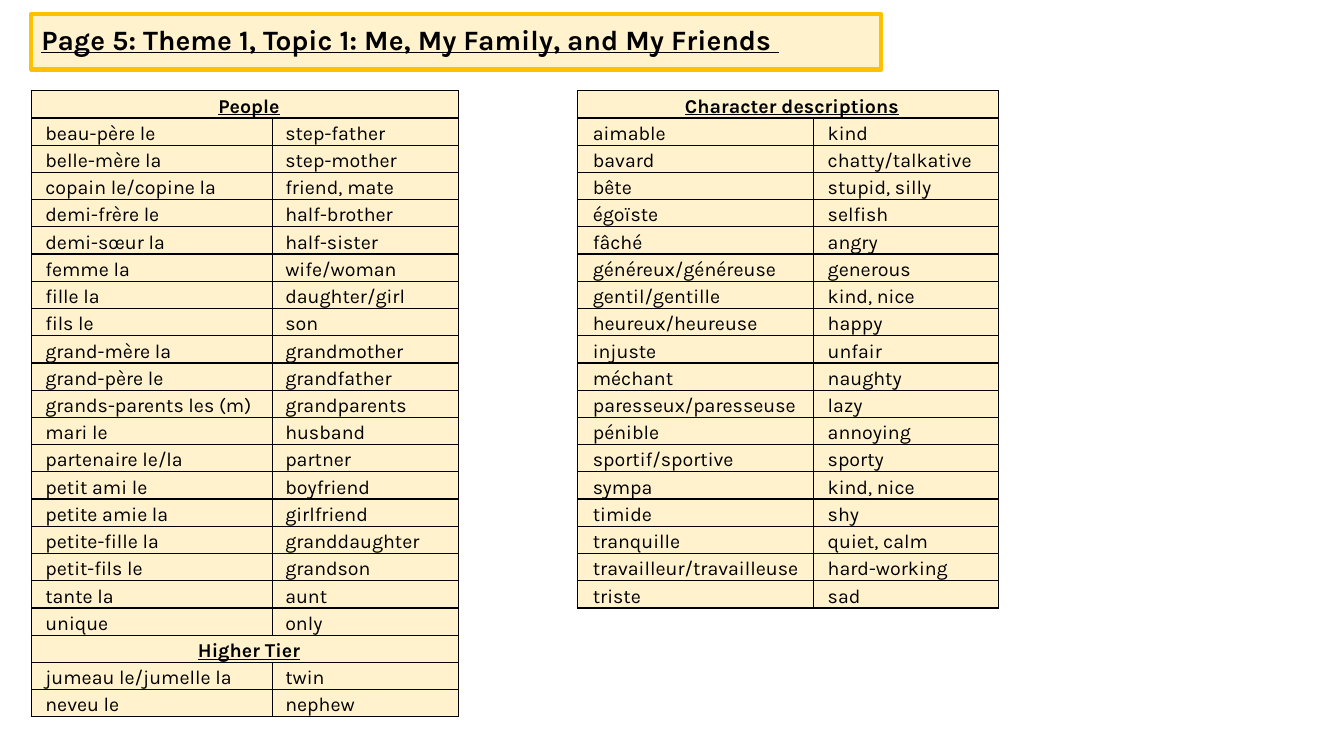
from lxml import etree
from pptx import Presentation
from pptx.dml.color import RGBColor
from pptx.enum import text
from pptx.oxml import ns
from pptx.util import Pt

PX = 9144  # EMU per px, 100 px to the inch
FONT = "Karla"
COLORS = {"cream": "FFF2CC", "gold": "FFC000", "ink": "000000"}
TITLE = "Page 5: Theme 1, Topic 1: Me, My Family, and My Friends "

# A row with one entry is a heading across both columns.
PEOPLE = [
    ("People",),
    ("beau-père le", "step-father"),
    ("belle-mère la", "step-mother"),
    ("copain le/copine la", "friend, mate"),
    ("demi-frère le", "half-brother"),
    ("demi-sœur la", "half-sister"),
    ("femme la", "wife/woman"),
    ("fille la", "daughter/girl"),
    ("fils le", "son"),
    ("grand-mère la", "grandmother"),
    ("grand-père le", "grandfather"),
    ("grands-parents les (m)", "grandparents"),
    ("mari le", "husband"),
    ("partenaire le/la", "partner"),
    ("petit ami le", "boyfriend"),
    ("petite amie la", "girlfriend"),
    ("petite-fille la", "granddaughter"),
    ("petit-fils le", "grandson"),
    ("tante la", "aunt"),
    ("unique", "only"),
    ("Higher Tier",),
    ("jumeau le/jumelle la", "twin"),
    ("neveu le", "nephew"),
]
CHARACTER = [
    ("Character descriptions",),
    ("aimable", "kind"),
    ("bavard", "chatty/talkative"),
    ("bête", "stupid, silly"),
    ("égoïste", "selfish"),
    ("fâché", "angry"),
    ("généreux/généreuse", "generous"),
    ("gentil/gentille", "kind, nice"),
    ("heureux/heureuse", "happy"),
    ("injuste", "unfair"),
    ("méchant", "naughty"),
    ("paresseux/paresseuse", "lazy"),
    ("pénible", "annoying"),
    ("sportif/sportive", "sporty"),
    ("sympa", "kind, nice"),
    ("timide", "shy"),
    ("tranquille", "quiet, calm"),
    ("travailleur/travailleuse", "hard-working"),
    ("triste", "sad"),
]


def rgb(name):
    return RGBColor.from_string(COLORS[name])


def paint(fill, name):
    fill.solid()
    fill.fore_color.rgb = rgb(name)


def write(frame, wording, size, heading):
    """Put one formatted paragraph in the frame and return it."""
    frame.text = wording
    paragraph = frame.paragraphs[0]
    font = paragraph.runs[0].font
    font.name = FONT
    font.size = Pt(size)
    font.bold = font.underline = heading
    font.color.rgb = rgb("ink")
    return paragraph


def add_title(slide):
    title = slide.shapes.title
    title.left, title.top, title.width, title.height = (
        n * PX for n in (31, 14, 843, 55))
    paint(title.fill, "cream")
    title.line.color.rgb = rgb("gold")
    title.line.width = Pt(3)
    frame = title.text_frame
    paragraph = write(frame, TITLE, 20, True)
    paragraph.alignment = text.PP_ALIGN.LEFT
    paragraph.line_spacing = 0.9
    frame.vertical_anchor = text.MSO_ANCHOR.MIDDLE
    frame.auto_size = text.MSO_AUTO_SIZE.NONE


def border(cell):
    properties = cell._tc.get_or_add_tcPr()
    for side in ("lnL", "lnR", "lnT", "lnB"):
        edge = etree.SubElement(properties, ns.qn(f"a:{side}"), w=str(Pt(1)))
        solid = etree.SubElement(edge, ns.qn("a:solidFill"))
        etree.SubElement(solid, ns.qn("a:srgbClr"), val=COLORS["ink"])


def style_cell(cell, inset):
    border(cell)
    paint(cell.fill, "cream")
    cell.margin_left = cell.margin_right = inset * PX
    cell.margin_top = cell.margin_bottom = 0


def add_word_list(slide, entries, left, widths, row_height, inset):
    top = 90
    table = slide.shapes.add_table(
        len(entries), 2, left * PX, top * PX,
        sum(widths) * PX, len(entries) * row_height * PX).table
    table.first_row = table.horz_banding = False
    for column, width in zip(table.columns, widths):
        column.width = width * PX
    for row, entry in enumerate(entries):
        table.rows[row].height = row_height * PX
        heading = len(entry) == 1
        for cell in table.rows[row].cells:
            style_cell(cell, inset)
        if heading:
            table.cell(row, 0).merge(table.cell(row, 1))
        for column, (wording, indent) in enumerate(zip(entry, (8, 7))):
            frame = table.cell(row, column).text_frame
            paragraph = write(frame, wording, 14, heading)
            paragraph.line_spacing = 1.19
            paragraph._p.get_or_add_pPr().set("marL", str(indent * PX))
            if heading:
                paragraph.alignment = text.PP_ALIGN.CENTER


def main():
    prs = Presentation()
    prs.slide_width, prs.slide_height = 1333 * PX, 750 * PX
    slide = prs.slides.add_slide(prs.slide_layouts.get_by_name("Title Only"))
    add_title(slide)
    add_word_list(slide, PEOPLE, 31, (239, 185), 27, 6)
    add_word_list(slide, CHARACTER, 573, (234, 183), 27, 7)
    prs.save("out.pptx")


if __name__ == "__main__":
    main()
